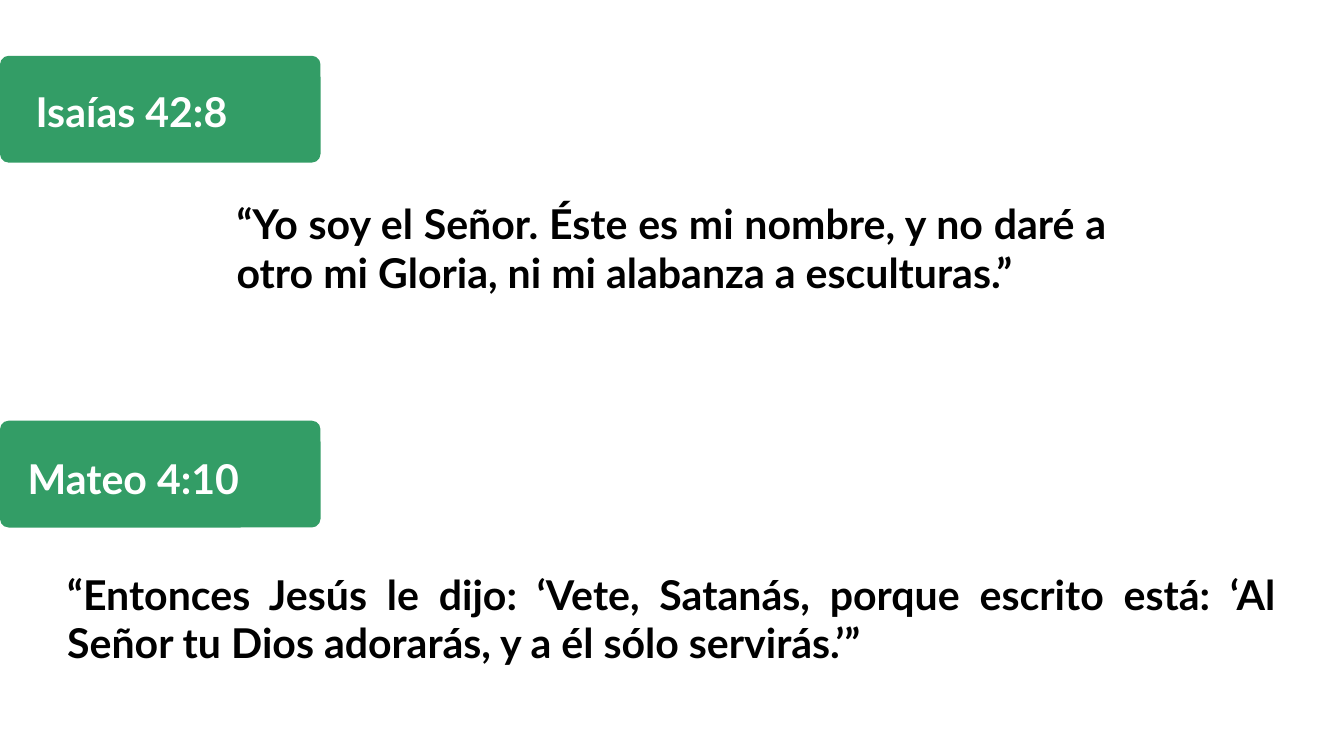
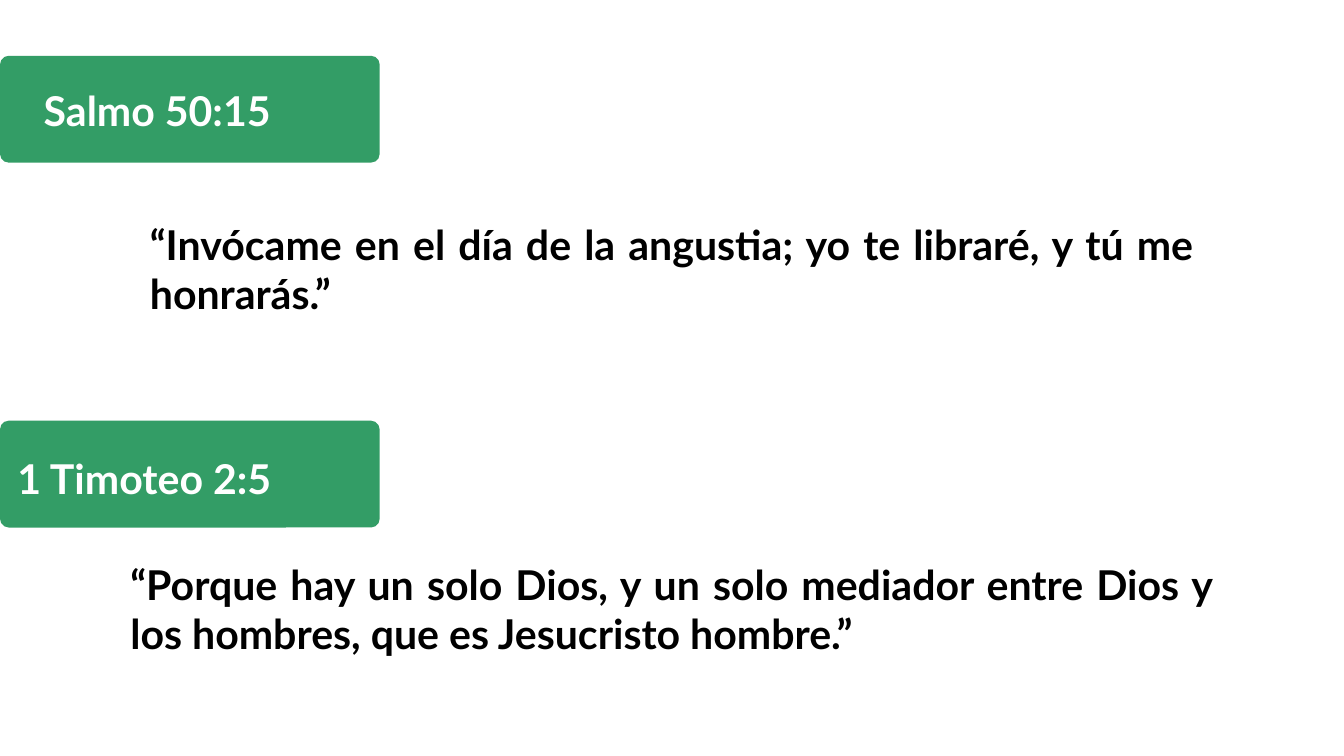
from lxml.etree import SubElement
from pptx import Presentation
from pptx.dml.color import RGBColor
from pptx.enum.shapes import MSO_SHAPE as Shape
from pptx.enum.text import MSO_ANCHOR as Anchor, MSO_AUTO_SIZE as Fit, PP_ALIGN as Align
from pptx.oxml.ns import qn
from pptx.util import Inches, Pt

GREEN, WHITE, BLACK = "008540", "FFFFFF", "000000"
BAND_TOPS, BAND_HIGH, RADIUS = (0.83, 6.26), 1.59, 0.13

# Each slide: band width, then two verses of (reference, its box, quote, its box).
SLIDES = [
    (4.77, [
        ("Isaías 42:8", (0.53, 0.99, 8.39, 1.04),
         "“Yo soy el Señor. Éste es mi nombre, y no daré a otro mi Gloria, "
         "ni mi alabanza a esculturas.”", (3.52, 2.99, 12.96, 3.16)),
        ("Mateo 4:10", (0.41, 6.45, 9.15, 1.04),
         "“Entonces Jesús le dijo: ‘Vete, Satanás, porque escrito está: "
         "‘Al Señor tu Dios adorarás, y a él sólo servirás.’”", (1, 8.5, 18, 3.09)),
    ]),
    (5.65, [
        ("Salmo 50:15", (0.65, 0.98, 8.51, 1.04),
         "“Invócame en el día de la angustia; yo te libraré, y tú me honrarás.”",
         (2.23, 3.3, 15.55, 3.16)),
        ("1 Timoteo 2:5", (0.26, 6.46, 9.03, 1.04),
         "“Porque hay un solo Dios, y un solo mediador entre Dios y los hombres, "
         "que es Jesucristo hombre.”", (1.94, 8.36, 16.12, 3.16)),
    ]),
]

FRAME = dict(margin_left=0, margin_top=0, margin_right=0, margin_bottom=0,
             word_wrap=True, auto_size=Fit.NONE, vertical_anchor=Anchor.TOP)
FONT = dict(name="Lato", size=Pt(44), bold=True)
LABEL = dict(alignment=Align.LEFT, line_spacing=1.4)
QUOTE = dict(alignment=Align.JUSTIFY, line_spacing=0.99)


def assign(item, values):
    for name, value in values.items():
        setattr(item, name, value)


def paint(target, color):
    target.rgb = RGBColor.from_string(color)


def place(shape, box):
    assign(shape, dict(zip(("left", "top", "width", "height"), map(Inches, box))))


def write(shape, text, color, style):
    frame = shape.text_frame
    assign(frame, FRAME)
    para = frame.paragraphs[0]
    assign(para, style)
    run = para.add_run()
    run.text = text
    assign(run.font, FONT)
    paint(run.font.color, color)


def add_band(slide, top, width):
    """Draw a green rounded band at 80 % opacity from the left edge."""
    band = slide.shapes.add_shape(Shape.ROUNDED_RECTANGLE, 0, Inches(top),
                                  Inches(width), Inches(BAND_HIGH))
    band.adjustments[0] = RADIUS / BAND_HIGH
    band.shadow.inherit = False
    band.line.fill.background()
    band.fill.solid()
    paint(band.fill.fore_color, GREEN)
    tint = next(band.element.spPr.iter(qn("a:srgbClr")))
    SubElement(tint, qn("a:alpha"), val="80000")


def add_text(slide, box, text, color, style):
    write(slide.shapes.add_textbox(*map(Inches, box)), text, color, style)


def add_title(slide, box, text):
    """Fill the title and bring it in front of its band."""
    title = slide.shapes.title
    place(title, box)
    write(title, text, WHITE, LABEL)
    title.element.getparent().append(title.element)


def main():
    deck = Presentation()
    deck.slide_width, deck.slide_height = Inches(20), Inches(11.25)
    for width, verses in SLIDES:
        slide = deck.slides.add_slide(deck.slide_layouts[5])
        for row, (label, spot, quote, box) in enumerate(verses):
            add_band(slide, BAND_TOPS[row], width)
            if row == 0:
                add_title(slide, spot, label)
            else:
                add_text(slide, spot, label, WHITE, LABEL)
            add_text(slide, box, quote, BLACK, QUOTE)
    deck.save("out.pptx")


if __name__ == "__main__":
    main()
